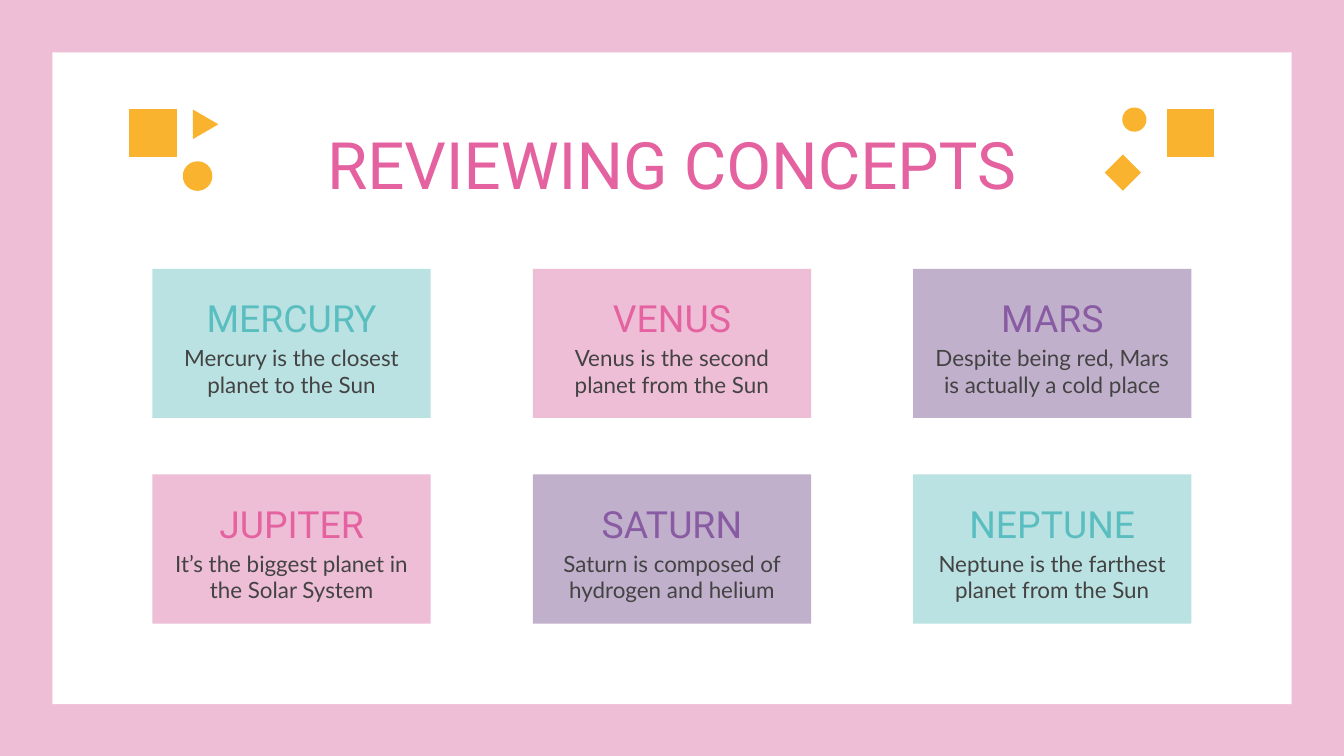
from pptx import Presentation
from pptx.dml.color import RGBColor
from pptx.enum.shapes import MSO_SHAPE
from pptx.enum.text import MSO_ANCHOR, PP_ALIGN
from pptx.util import Inches, Pt

RECT = MSO_SHAPE.RECTANGLE
OVAL = MSO_SHAPE.OVAL
DIAMOND = MSO_SHAPE.DIAMOND
TRIANGLE = MSO_SHAPE.ISOSCELES_TRIANGLE
TOP, BOTTOM = MSO_ANCHOR.TOP, MSO_ANCHOR.BOTTOM
CENTER = PP_ALIGN.CENTER

COLORS = {
    "white": "FFFFFF", "text": "434343", "gold": "FAB32E",
    "teal": "5ABEC0", "pink": "E562A0", "purple": "885BA2",
    "pale teal": "BBE2E2", "pale pink": "EEBDD6", "pale purple": "C0B0CC",
}

PLANETS = [
    ("MERCURY", "Mercury is the closest planet to the Sun", "teal"),
    ("VENUS", "Venus is the second planet from the Sun", "pink"),
    ("MARS", "Despite being red, Mars is actually a cold place", "purple"),
    ("JUPITER", "It’s the biggest planet in the Solar System", "pink"),
    ("SATURN", "Saturn is composed of hydrogen and helium", "purple"),
    ("NEPTUNE", "Neptune is the farthest planet from the Sun", "teal"),
]

# kind, left, top, width, height, rotation
ACCENTS = [
    (DIAMOND, 0.89, 0.74, 0.5, 0.5, 45),
    (TRIANGLE, 1.42, 0.83, 0.22, 0.19, 90),
    (OVAL, 1.36, 1.2, 0.22, 0.22, 0),
    (DIAMOND, 8.61, 0.74, 0.5, 0.5, 315),
    (OVAL, 8.35, 0.8, 0.18, 0.18, 0),
    (DIAMOND, 8.22, 1.15, 0.27, 0.27, 0),
]


def rgb(name):
    return RGBColor.from_string(COLORS[name])


def add_shape(slide, kind, left, top, width, height, color, turn=0):
    shape = slide.shapes.add_shape(
        kind, Inches(left), Inches(top), Inches(width), Inches(height))
    shape.shadow.inherit = False
    shape.fill.solid()
    shape.fill.fore_color.rgb = rgb(color)
    shape.line.fill.background()
    shape.rotation = turn
    return shape


def set_text(shape, text, font, size, color, anchor=TOP, bottom=0.1):
    frame = shape.text_frame
    frame.word_wrap = True
    frame.vertical_anchor = anchor
    frame.margin_left = frame.margin_right = frame.margin_top = Inches(0.1)
    frame.margin_bottom = Inches(bottom)
    frame.text = text
    line = frame.paragraphs[0]
    line.alignment = CENTER
    line.font.name = font
    line.font.size = Pt(size)
    line.font.color.rgb = rgb(color)


def add_panel(slide):
    """Frame the slide with a white panel behind everything else."""
    fill = slide.background.fill
    fill.solid()
    fill.fore_color.rgb = rgb("pale pink")
    panel = add_shape(slide, RECT, 0.39, 0.39, 9.22, 4.85, "white")
    slide.shapes.element.insert(2, panel.element)


def add_title(slide):
    title = slide.shapes.title
    title.left, title.top = Inches(1.7), Inches(0.82)
    title.width, title.height = Inches(6.6), Inches(0.63)
    set_text(title, "REVIEWING CONCEPTS", "Roboto", 35, "pink")


def add_card(slide, mid, top, name, fact, color):
    width, head = 2.07, 2.49
    card = add_shape(slide, RECT, mid - width / 2, top, width, 1.11,
                     f"pale {color}")
    set_text(card, fact, "Lato", 12, "text", BOTTOM, 0.15)
    label = slide.shapes.add_textbox(
        Inches(mid - head / 2), Inches(top + 0.1), Inches(head), Inches(0.47))
    set_text(label, name, "Roboto", 20, color)


def main():
    deck = Presentation()
    deck.slide_width = Inches(10)
    deck.slide_height = deck.slide_width * 9 // 16
    slide = deck.slides.add_slide(deck.slide_layouts[5])
    add_panel(slide)
    add_title(slide)
    for i, planet in enumerate(PLANETS):
        row, col = divmod(i, 3)
        add_card(slide, 5 + (col - 1) * 2.83, 2 + row * 1.53, *planet)
    for kind, left, top, width, height, turn in ACCENTS:
        add_shape(slide, kind, left, top, width, height, "gold", turn)
    deck.save("out.pptx")


if __name__ == "__main__":
    main()
